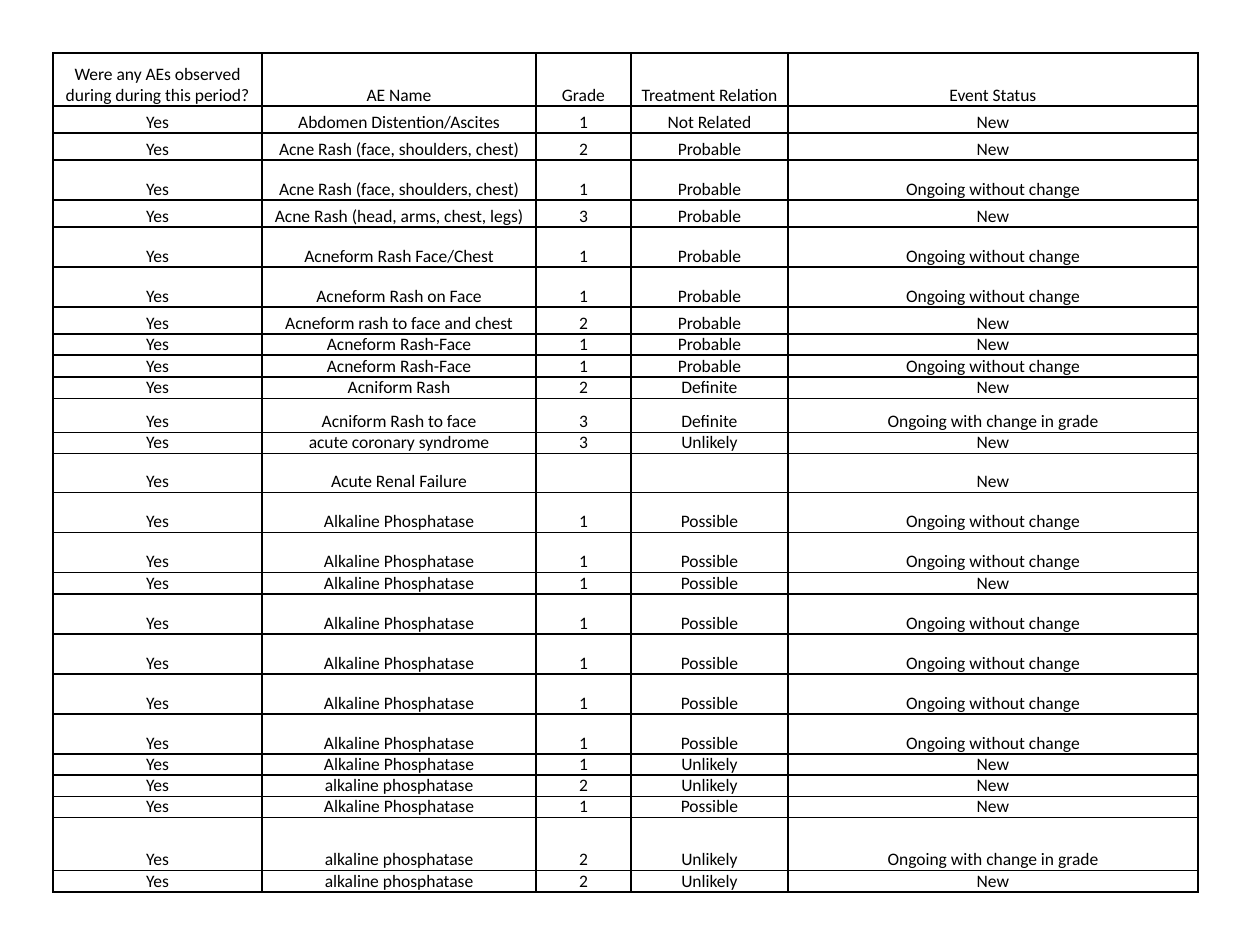
from typing import NamedTuple

from lxml import etree
from pptx import Presentation, util as u
from pptx.dml.color import RGBColor
from pptx.enum import text
from pptx.oxml.ns import qn

PX = u.Inches(1) // 126
BLACK = "000000"
LEFT, TOP, HEIGHT = 53, 53, 843
COL_WIDTHS = (209, 274, 95, 157, 410)
HEADERS = (
    "Were any AEs observed during during this period?",
    "AE Name",
    "Grade",
    "Treatment Relation",
    "Event Status",
)

# Row heights; rows set to TIGHT grow to fit their text.
TALL, MEDIUM, SHORT, TIGHT = 53, 40, 27, 14

NEW = "New"
SAME = "Ongoing without change"
REGRADED = "Ongoing with change in grade"


class Event(NamedTuple):
    height: int
    name: str
    grade: str
    relation: str
    status: str


ALK_PHOS = "Alkaline Phosphatase"
ALK_PHOS_SAME = Event(MEDIUM, ALK_PHOS, "1", "Possible", SAME)
EVENTS = [
    Event(SHORT, "Abdomen Distention/Ascites", "1", "Not Related", NEW),
    Event(SHORT, "Acne Rash (face, shoulders, chest)", "2", "Probable", NEW),
    Event(MEDIUM, "Acne Rash (face, shoulders, chest)", "1", "Probable", SAME),
    Event(SHORT, "Acne Rash (head, arms, chest, legs)", "3", "Probable", NEW),
    Event(MEDIUM, "Acneform Rash Face/Chest", "1", "Probable", SAME),
    Event(MEDIUM, "Acneform Rash on Face", "1", "Probable", SAME),
    Event(SHORT, "Acneform rash to face and chest", "2", "Probable", NEW),
    Event(TIGHT, "Acneform Rash-Face", "1", "Probable", NEW),
    Event(22, "Acneform Rash-Face", "1", "Probable", SAME),
    Event(TIGHT, "Acniform Rash", "2", "Definite", NEW),
    Event(34, "Acniform Rash to face", "3", "Definite", REGRADED),
    Event(TIGHT, "acute coronary syndrome", "3", "Unlikely", NEW),
    Event(39, "Acute Renal Failure", "", "", NEW),
    *[ALK_PHOS_SAME] * 2,
    Event(TIGHT, ALK_PHOS, "1", "Possible", NEW),
    *[ALK_PHOS_SAME] * 4,
    Event(TIGHT, ALK_PHOS, "1", "Unlikely", NEW),
    Event(TIGHT, ALK_PHOS.lower(), "2", "Unlikely", NEW),
    Event(TIGHT, ALK_PHOS, "1", "Possible", NEW),
    Event(TALL, ALK_PHOS.lower(), "2", "Unlikely", REGRADED),
    Event(TIGHT, ALK_PHOS.lower(), "2", "Unlikely", NEW),
]


def px(n: int) -> u.Emu:
    return u.Emu(n * PX)


def rgb(value: str) -> RGBColor:
    return RGBColor.from_string(value)


def add_borders(cell, color: str) -> None:
    tc_pr = cell._tc.get_or_add_tcPr()
    for side in ("lnL", "lnR", "lnT", "lnB"):
        ln = etree.SubElement(tc_pr, qn(f"a:{side}"), w=str(u.Pt(1)))
        fill = etree.SubElement(ln, qn("a:solidFill"))
        etree.SubElement(fill, qn("a:srgbClr"), val=color)


def fill_cell(cell, content: str) -> None:
    cell.margin_left = cell.margin_right = cell.margin_top = cell.margin_bottom = 0
    cell.vertical_anchor = text.MSO_ANCHOR.BOTTOM
    add_borders(cell, BLACK)
    cell.fill.background()
    p = cell.text_frame.paragraphs[0]
    p.text = content
    p.alignment = text.PP_ALIGN.CENTER
    p.font.name = "Calibri"
    p.font.size = u.Pt(10)
    p.font.bold = False
    p.font.color.rgb = rgb(BLACK)


def add_event_table(slide, events: list[Event]) -> None:
    frame = slide.shapes.add_table(
        len(events) + 1, len(COL_WIDTHS),
        px(LEFT), px(TOP), px(sum(COL_WIDTHS)), px(HEIGHT),
    )
    table = frame.table
    table.first_row = table.horz_banding = False
    for column, width in zip(table.columns, COL_WIDTHS):
        column.width = px(width)
    rows = [(TALL, *HEADERS)] + [(e.height, "Yes", *e[1:]) for e in events]
    for row, (height, *contents) in zip(table.rows, rows):
        row.height = px(height)
        for cell, content in zip(row.cells, contents):
            fill_cell(cell, content)
    frame.height = px(HEIGHT)


def main() -> None:
    prs = Presentation()
    prs.slide_width, prs.slide_height = px(1260), px(945)
    slide = prs.slides.add_slide(prs.slide_layouts[6])
    add_event_table(slide, EVENTS)
    prs.save("out.pptx")


if __name__ == "__main__":
    main()
